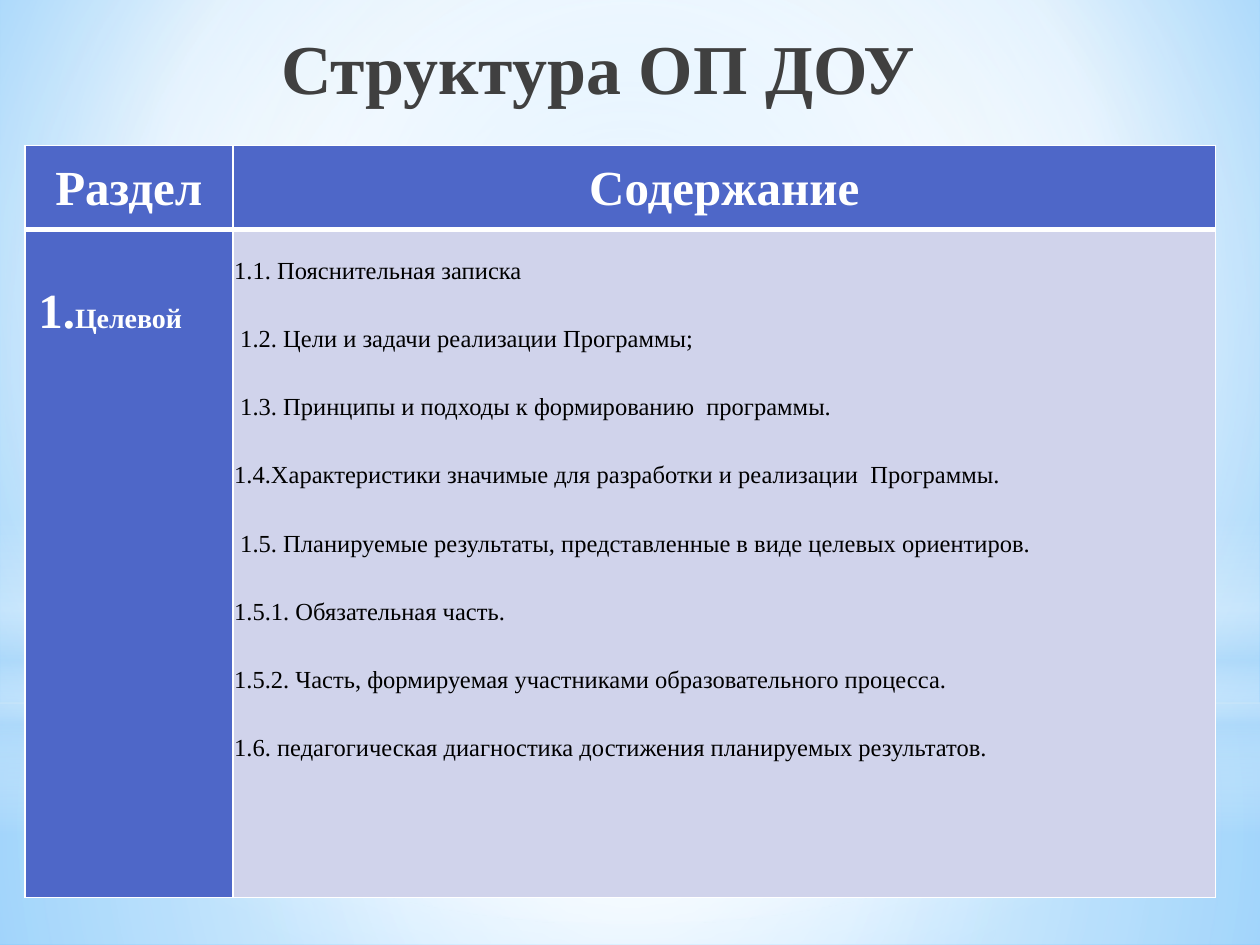
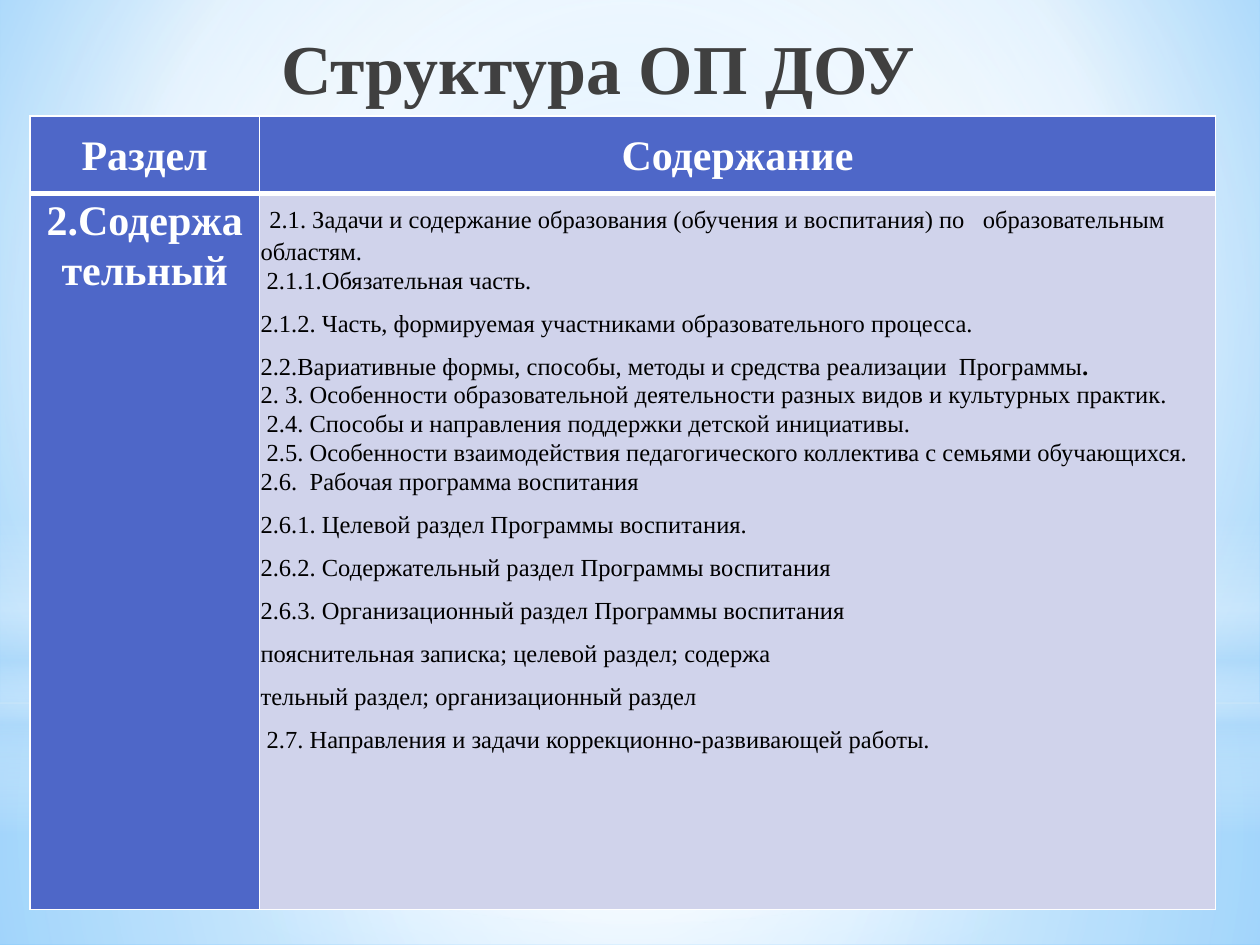
from lxml import etree
from pptx import Presentation
from pptx.dml.color import RGBColor
from pptx.enum.shapes import MSO_SHAPE
from pptx.enum.text import MSO_ANCHOR, PP_ALIGN
from pptx.oxml.ns import qn
from pptx.util import Pt

RECTANGLE, OVAL = MSO_SHAPE.RECTANGLE, MSO_SHAPE.OVAL
TOP, MIDDLE = MSO_ANCHOR.TOP, MSO_ANCHOR.MIDDLE
LEFT, CENTER, RIGHT = PP_ALIGN.LEFT, PP_ALIGN.CENTER, PP_ALIGN.RIGHT

# Shared look
FONT = "Times New Roman"
WHITE = RGBColor(0xFF, 0xFF, 0xFF)
BLACK = RGBColor(0x00, 0x00, 0x00)
TITLE_GRAY = RGBColor(0x40, 0x40, 0x40)
HEADER_BLUE = RGBColor(0x4E, 0x67, 0xC8)
BODY_LILAC = RGBColor(0xD0, 0xD3, 0xEB)
SKY = RGBColor(0x9E, 0xD5, 0xFF)
DEEP_SKY = RGBColor(0x5B, 0xB9, 0xFF)
PALE_BLUE = RGBColor(0xB4, 0xDC, 0xFA)

WIDTH, HEIGHT, HORIZON = 720, 540, 401.76
CELL_INSET = Pt(0.72)
TITLE = "Структура ОП ДОУ"
HEADERS = ("Раздел", "Содержание")
CENTRE = (50, 50, 50, 50)

# Backdrop layers: shape, top, height, stops (position, colour, opacity), focus
BACKDROP = [
    (RECTANGLE, HORIZON, HEIGHT - HORIZON,
     [(0, WHITE, 91), (37, WHITE, 76), (100, PALE_BLUE, 79)], CENTRE),
    (RECTANGLE, 0, HORIZON,
     [(0, WHITE, 89), (48, WHITE, 62), (100, PALE_BLUE, 79)], CENTRE),
    (RECTANGLE, 296.64, 180,
     [(0, WHITE, 0), (29, WHITE, 30), (45, PALE_BLUE, 40),
      (55, WHITE, 26), (65, PALE_BLUE, 60), (100, WHITE, 0)], None),
    (OVAL, 126, HORIZON, [(0, WHITE, 100), (56, WHITE, 0)], CENTRE),
]

# Contents: a paragraph is a list of (text, font changes) runs
TARGET_LABEL = [[(" 1.", {}), ("Целевой", {"size": Pt(16)})]]
TARGET_ITEMS = [[(text, {})] for text in (
    "1.1. Пояснительная записка",
    " 1.2. Цели и задачи реализации Программы;",
    " 1.3. Принципы и подходы к формированию  программы.",
    "1.4.Характеристики значимые для разработки и реализации  Программы.",
    " 1.5. Планируемые результаты, представленные в виде целевых ориентиров.",
    "1.5.1. Обязательная часть.",
    "1.5.2. Часть, формируемая участниками образовательного процесса.",
    "1.6. педагогическая диагностика достижения планируемых результатов.",
)]
CONTENT_LABEL = [[("2.Содержа", {})], [("тельный", {})]]
CONTENT_ITEMS = [
    [(" ", {"size": Pt(20)}),
     ("2.1. Задачи и содержание образования (обучения и воспитания) по   образовательным  областям.\n"
      " 2.1.1.Обязательная часть.", {})],
    [("2.1.2. Часть, формируемая участниками образовательного процесса.", {})],
    [("2.2.Вариативные формы, способы, методы и средства реализации  Программы", {}),
     (".\n", {"bold": True, "italic": True}),
     ("2. 3. Особенности образовательной деятельности разных видов и культурных практик.\n"
      " 2.4. Способы и направления поддержки детской инициативы.\n"
      " 2.5. Особенности взаимодействия педагогического коллектива с семьями обучающихся. "
      "2.6.  Рабочая программа воспитания", {})],
    *[[(text, {})] for text in (
        "2.6.1. Целевой раздел Программы воспитания.",
        "2.6.2. Содержательный раздел Программы воспитания",
        "2.6.3. Организационный раздел Программы воспитания",
        "пояснительная записка; целевой раздел; содержа",
        "тельный раздел; организационный раздел",
        " 2.7. Направления и задачи коррекционно-развивающей работы.",
    )],
]


def set_gradient(parent, stops, focus):
    """Replace the solid fill inside parent by a radial or vertical gradient."""
    gradient = etree.Element(qn("a:gradFill"), rotWithShape="1")
    stop_list = etree.SubElement(gradient, qn("a:gsLst"))
    for position, color, opacity in stops:
        stop = etree.SubElement(stop_list, qn("a:gs"), pos=str(position * 1000))
        rgb = etree.SubElement(stop, qn("a:srgbClr"), val=str(color))
        if opacity < 100:
            etree.SubElement(rgb, qn("a:alpha"), val=str(opacity * 1000))
    if focus:
        circle = etree.SubElement(gradient, qn("a:path"), path="circle")
        sides = {side: str(share * 1000) for side, share in zip("ltrb", focus)}
        etree.SubElement(circle, qn("a:fillToRect"), **sides)
    else:
        etree.SubElement(gradient, qn("a:lin"), ang="5400000", scaled="0")
    parent.replace(parent.find(qn("a:solidFill")), gradient)


def set_background(master):
    master.background.fill.solid()
    properties = master.element.find(".//" + qn("p:bgPr"))
    set_gradient(properties, [(0, SKY, 100), (60, WHITE, 100), (100, DEEP_SKY, 100)],
                 (20, 10, 20, 60))


def add_backdrop(slide):
    for kind, top, height, stops, focus in BACKDROP:
        shape = slide.shapes.add_shape(kind, 0, Pt(top), Pt(WIDTH), Pt(height))
        shape.shadow.inherit = False
        shape.line.fill.background()
        shape.fill.solid()
        set_gradient(shape.element.spPr, stops, focus)


def style_paragraph(paragraph, size, color, bold, align):
    paragraph.alignment = align
    font = paragraph.font
    font.name, font.size, font.bold = FONT, Pt(size), bold
    font.color.rgb = color


def add_title(slide):
    box = slide.shapes.add_textbox(Pt(127.44), Pt(7.2), Pt(402.5), Pt(61.2))
    frame = box.text_frame
    frame.word_wrap = True
    frame.vertical_anchor = MIDDLE
    paragraph = frame.paragraphs[0]
    paragraph.text = TITLE
    style_paragraph(paragraph, 40, TITLE_GRAY, True, RIGHT)


def add_runs(paragraph, runs):
    for text, changes in runs:
        for index, line in enumerate(text.split("\n")):
            if index:
                paragraph.add_line_break()
            if line:
                run = paragraph.add_run()
                run.text = line
                for name, value in changes.items():
                    setattr(run.font, name, value)


def set_borders(cell, top, bottom):
    properties = cell._tc.get_or_add_tcPr()
    for index, (side, width) in enumerate(zip("LRTB", (1, 1, top, bottom))):
        line = etree.Element(qn("a:ln" + side), w=str(Pt(width)))
        fill = etree.SubElement(line, qn("a:solidFill"))
        etree.SubElement(fill, qn("a:srgbClr"), val=str(WHITE))
        properties.insert(index, line)


def fill_cell(cell, paragraphs, size, fill=HEADER_BLUE, color=WHITE, bold=True,
              align=CENTER, anchor=TOP, spacing=1.07, after=0, top=3, bottom=1):
    cell.fill.solid()
    cell.fill.fore_color.rgb = fill
    cell.margin_left = cell.margin_right = CELL_INSET
    cell.margin_top = cell.margin_bottom = CELL_INSET
    cell.vertical_anchor = anchor
    set_borders(cell, top, bottom)
    frame = cell.text_frame
    for index, runs in enumerate(paragraphs):
        paragraph = frame.add_paragraph() if index else frame.paragraphs[0]
        style_paragraph(paragraph, size, color, bold, align)
        paragraph.line_spacing = spacing
        paragraph.space_after = Pt(after)
        add_runs(paragraph, runs)


def add_section_table(slide, left, top, columns, rows, heading_size,
                      label, items, label_align, spacing):
    frame = slide.shapes.add_table(2, 2, Pt(left), Pt(top), Pt(sum(columns)), Pt(sum(rows)))
    table = frame.table
    table.horz_banding = False
    for column, width in zip(table.columns, columns):
        column.width = Pt(width)
    for row, height in zip(table.rows, rows):
        row.height = Pt(height)
    for index, header in enumerate(HEADERS):
        fill_cell(table.cell(0, index), [[(header, {})]], heading_size,
                  anchor=MIDDLE, top=1, bottom=3)
    fill_cell(table.cell(1, 0), label, heading_size, align=label_align, spacing=spacing)
    fill_cell(table.cell(1, 1), items, 14, fill=BODY_LILAC, color=BLACK, bold=False,
              align=LEFT, spacing=spacing, after=8)


def add_section_slide(presentation, **table):
    slide = presentation.slides.add_slide(presentation.slide_layouts[6])
    add_backdrop(slide)
    add_title(slide)
    add_section_table(slide, **table)


def main():
    presentation = Presentation()
    presentation.slide_width, presentation.slide_height = Pt(WIDTH), Pt(HEIGHT)
    set_background(presentation.slide_master)

    # Target section
    add_section_slide(presentation, left=14.2, top=83, columns=(118.9, 561.5),
                      rows=(48, 382), heading_size=28, label=TARGET_LABEL,
                      items=TARGET_ITEMS, label_align=LEFT, spacing=2)
    # Content section
    add_section_slide(presentation, left=17.2, top=66.2, columns=(131, 546.5),
                      rows=(44.5, 409), heading_size=24, label=CONTENT_LABEL,
                      items=CONTENT_ITEMS, label_align=CENTER, spacing=1.07)
    presentation.save("out.pptx")


if __name__ == "__main__":
    main()
